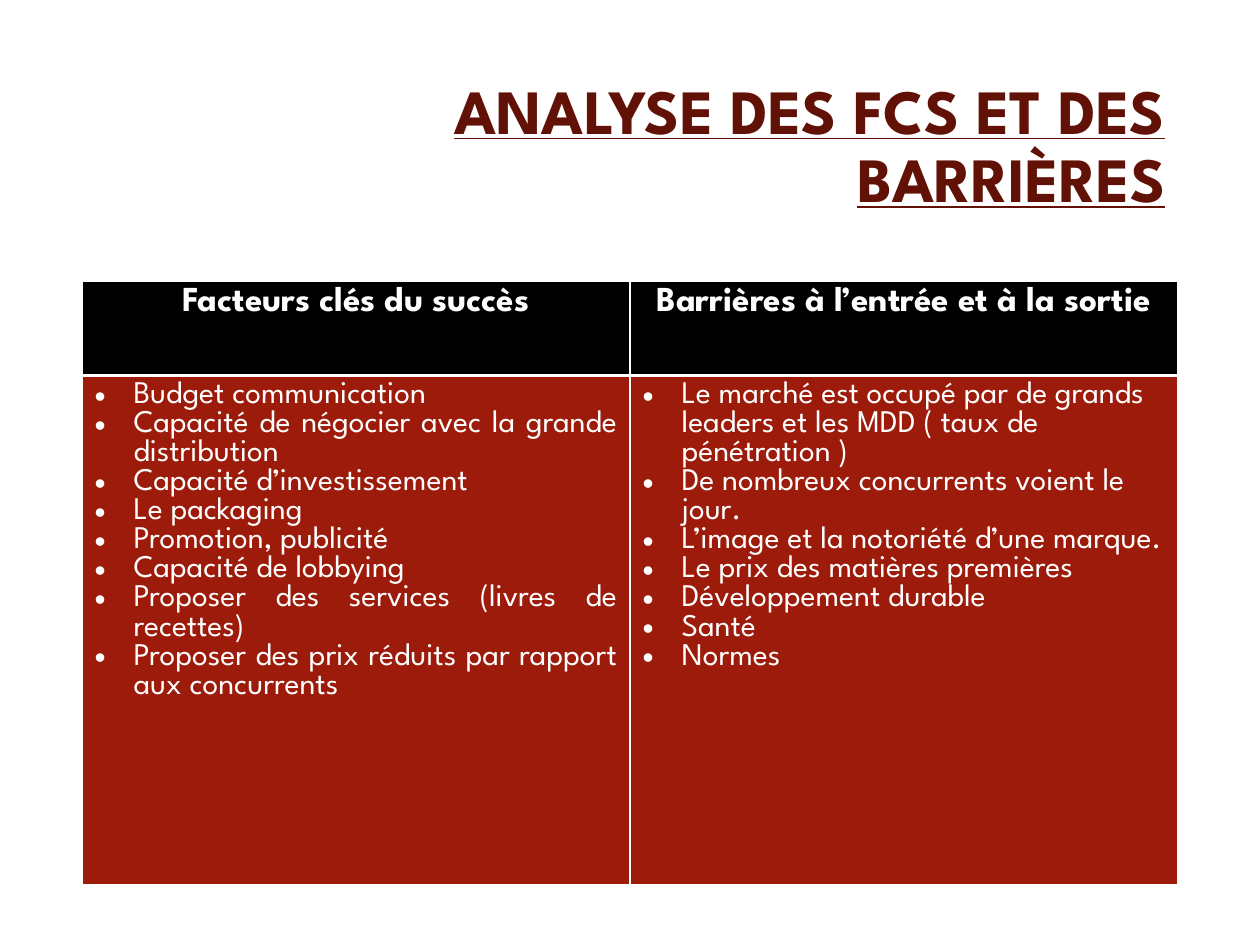
from lxml import etree
from pptx import Presentation
from pptx.dml.color import RGBColor
from pptx.enum.text import MSO_ANCHOR, PP_ALIGN
from pptx.oxml.ns import qn
from pptx.util import Inches, Pt

LEFT, RIGHT, CENTER, JUSTIFY = PP_ALIGN.LEFT, PP_ALIGN.RIGHT, PP_ALIGN.CENTER, PP_ALIGN.JUSTIFY
MIDDLE, TOP = MSO_ANCHOR.MIDDLE, MSO_ANCHOR.TOP
TITLE_ONLY = 5
FONT = "League Spartan"
COLORS = {"title": "621107", "header": "000000", "body": "9D1B0A", "light": "FFFFFF"}
SLIDE_WIDTH, SLIDE_HEIGHT = Inches(10), Inches(7.5)
MARGIN = 0.065
ROW_HEIGHTS = (0.75, 4.04)
BULLET_INDENT = Inches(0.31)

COLUMNS = (
    ("Facteurs clés du succès", JUSTIFY, (
        "Budget communication",
        "Capacité de négocier avec la grande distribution",
        "Capacité d’investissement",
        "Le packaging",
        "Promotion, publicité",
        "Capacité de lobbying",
        "Proposer des services (livres de recettes)",
        "Proposer des prix réduits par rapport aux concurrents",
    )),
    ("Barrières à l’entrée et à la sortie", LEFT, (
        "Le marché est occupé par de grands leaders et les MDD ( taux de pénétration )",
        "De nombreux concurrents voient le jour.",
        "L’image et la notoriété d’une marque.",
        "Le prix des matières premières",
        "Développement durable",
        "Santé",
        "Normes",
    )),
)


def add_run(paragraph, text, size, color, bold=False, underline=False):
    run = paragraph.add_run()
    run.text = text
    font = run.font
    font.name, font.size = FONT, Pt(size)
    font.bold, font.underline = bold, underline
    font.color.rgb = RGBColor.from_string(COLORS[color])


def add_bullet(paragraph):
    properties = paragraph._p.get_or_add_pPr()
    properties.set("marL", str(BULLET_INDENT))
    properties.set("indent", str(-BULLET_INDENT))
    etree.SubElement(properties, qn("a:buFont"), typeface="Arial")
    etree.SubElement(properties, qn("a:buChar"), char="•")


def add_bottom_border(cell, color, width):
    line = etree.Element(qn("a:lnB"), w=str(Pt(width)))
    fill = etree.SubElement(line, qn("a:solidFill"))
    etree.SubElement(fill, qn("a:srgbClr"), val=COLORS[color])
    cell._tc.get_or_add_tcPr().insert(0, line)


def fill_cell(cell, texts, color, alignment, size, bold=False, bulleted=False):
    cell.fill.solid()
    cell.fill.fore_color.rgb = RGBColor.from_string(COLORS[color])
    cell.vertical_anchor = TOP
    frame = cell.text_frame
    for index, text in enumerate(texts):
        paragraph = frame.add_paragraph() if index else frame.paragraphs[0]
        if bulleted:
            add_bullet(paragraph)
        paragraph.alignment = alignment
        add_run(paragraph, text, size, "light", bold)


def add_title(slide):
    title = slide.shapes.title
    title.left, title.top = Inches(2.38), Inches(0.84)
    title.width, title.height = Inches(6.97), Inches(1.41)
    frame = title.text_frame
    frame.word_wrap = True
    frame.vertical_anchor = MIDDLE
    paragraph = frame.paragraphs[0]
    paragraph.alignment = RIGHT
    paragraph.line_spacing = 0.9
    add_run(paragraph, "ANALYSE DES FCS ET DES BARRIÈRES", 36, "title", True, True)
    paragraph.add_line_break()


def add_analysis_table(slide):
    table = slide.shapes.add_table(
        len(ROW_HEIGHTS), len(COLUMNS), int(SLIDE_WIDTH * MARGIN), Inches(2.23),
        int(SLIDE_WIDTH * (1 - 2 * MARGIN)), Inches(sum(ROW_HEIGHTS))).table
    for row, height in zip(table.rows, ROW_HEIGHTS):
        row.height = Inches(height)
    for index, (heading, alignment, items) in enumerate(COLUMNS):
        header = table.cell(0, index)
        fill_cell(header, [heading], "header", CENTER, 20, bold=True)
        add_bottom_border(header, "light", 2)
        fill_cell(table.cell(1, index), items, "body", alignment, 18, bulleted=True)


def main():
    presentation = Presentation()
    presentation.slide_width, presentation.slide_height = SLIDE_WIDTH, SLIDE_HEIGHT
    slide = presentation.slides.add_slide(presentation.slide_layouts[TITLE_ONLY])
    add_title(slide)
    add_analysis_table(slide)
    presentation.save("out.pptx")


if __name__ == "__main__":
    main()
